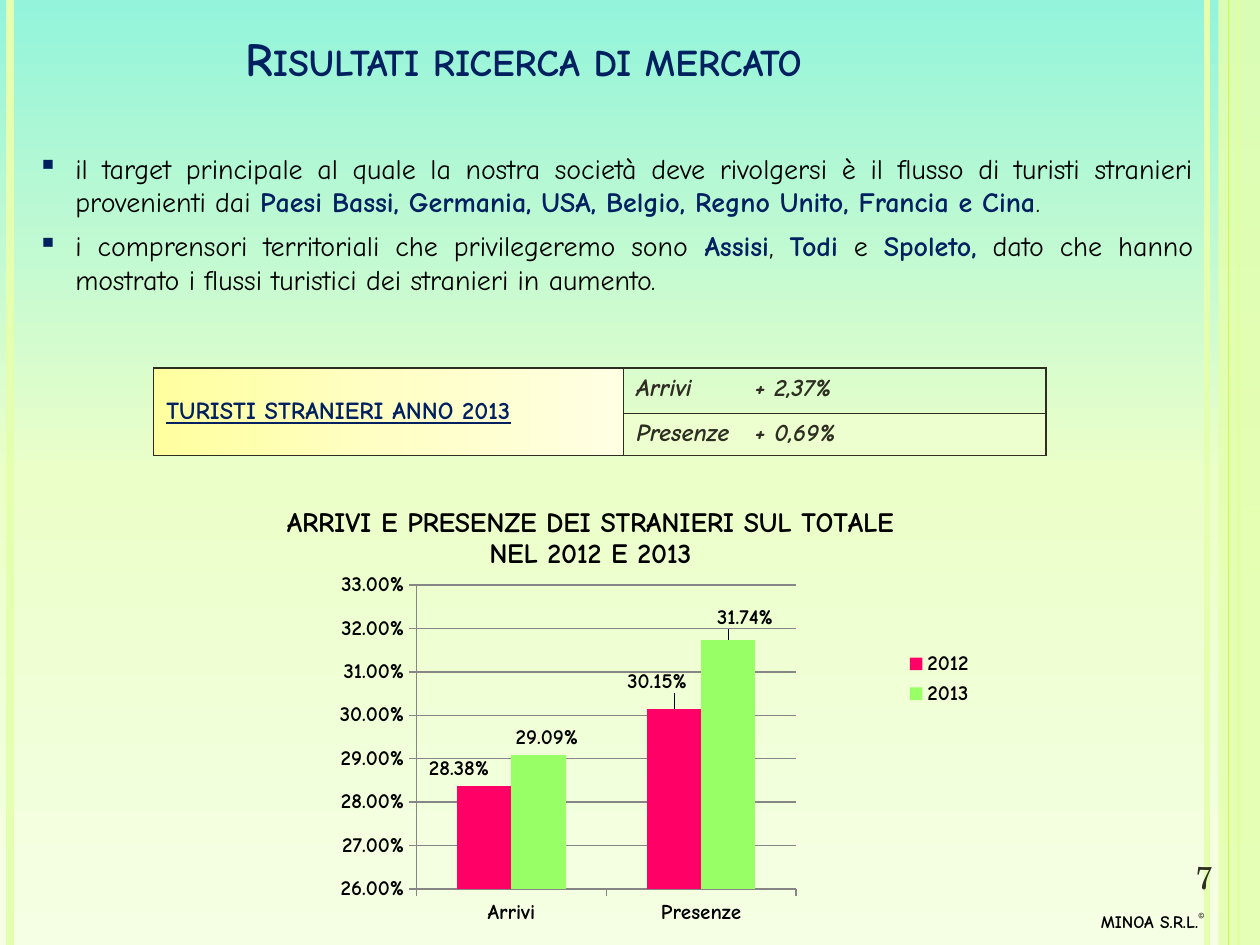
from dataclasses import dataclass

from lxml import etree
from pptx import Presentation
from pptx.chart.data import CategoryChartData
from pptx.dml.color import RGBColor
from pptx.enum.chart import (XL_CHART_TYPE, XL_LABEL_POSITION,
                             XL_LEGEND_POSITION, XL_TICK_MARK)
from pptx.enum.shapes import MSO_CONNECTOR, MSO_SHAPE
from pptx.enum.text import MSO_ANCHOR, PP_ALIGN
from pptx.oxml.ns import qn
from pptx.util import Inches, Pt

COLUMN = XL_CHART_TYPE.COLUMN_CLUSTERED
OUT_END = XL_LABEL_POSITION.OUTSIDE_END
RIGHT_SIDE = XL_LEGEND_POSITION.RIGHT
TICK_OUT = XL_TICK_MARK.OUTSIDE
STRAIGHT = MSO_CONNECTOR.STRAIGHT
RECT = MSO_SHAPE.RECTANGLE
MIDDLE, TOP = MSO_ANCHOR.MIDDLE, MSO_ANCHOR.TOP
LEFT, RIGHT, JUST = PP_ALIGN.LEFT, PP_ALIGN.RIGHT, PP_ALIGN.JUSTIFY

BLACK = RGBColor(0x00, 0x00, 0x00)
NAVY = RGBColor(0x00, 0x20, 0x60)
OLIVE = RGBColor(0x2E, 0x2D, 0x21)
PALE = RGBColor(0xE4, 0xFF, 0xB0)
LIME = RGBColor(0xCF, 0xFF, 0x43)
MINT = RGBColor(0xED, 0xFF, 0xCF)
GREY = RGBColor(0x86, 0x86, 0x86)
PINK = RGBColor(0xFF, 0x00, 0x66)
GREEN = RGBColor(0x99, 0xFF, 0x66)
SKY = ("93F4DB", "EBFFC9", "F5FFE4")
CREAM = ("FFFFA0", "FFFFC5", "FFFFE3")

# The slide is a grid of 100 columns by 75 rows
COLS, ROWS = 100, 75
CELL = Inches(0.1)
PERCENT = "0.00%"
COMIC = {"name": "Comic Neue", "size": Pt(12), "bold": True, "color": BLACK}
PLAIN = COMIC | {"size": Pt(16), "bold": False}
STRONG = PLAIN | {"bold": True, "color": NAVY}
HEAD = STRONG | {"size": Pt(27)}
LABEL = STRONG | {"size": Pt(14), "underline": True}
VALUE = LABEL | {"underline": False, "italic": True, "color": OLIVE}


@dataclass
class Stripe:
    col: float
    width: float
    color: RGBColor


@dataclass
class Box:
    col: float
    row: float
    wide: float
    high: float

    def emu(self) -> list[int]:
        return [grid(n) for n in (self.col, self.row, self.wide, self.high)]


@dataclass
class Bars:
    name: str
    values: tuple
    color: RGBColor
    shifts: tuple


STRIPES = [Stripe(95.8, 3, PALE), Stripe(0.8, 4.5, PALE), Stripe(98.3, 1.5, LIME)]
EDGE = Stripe(97.5, 0.75, LIME)
POINTS = [
    [("il target principale al quale la nostra società deve rivolgersi è il "
      "flusso di turisti stranieri provenienti dai ", PLAIN),
     ("Paesi Bassi, Germania, USA, Belgio, Regno Unito, Francia e Cina", STRONG),
     (".", PLAIN)],
    [("i comprensori territoriali che privilegeremo sono ", PLAIN),
     ("Assisi", STRONG), (", ", PLAIN), ("Todi", STRONG), (" e ", PLAIN),
     ("Spoleto,", STRONG),
     (" dato che hanno mostrato i flussi turistici dei stranieri in aumento.", PLAIN)],
]
SERIES = [
    Bars("2012", (0.2838, 0.3015), PINK, ((-0.03, 0), (-0.02, -0.02))),
    Bars("2013", (0.2909, 0.3174), GREEN, ((0.01, 0), (0.02, -0.01))),
]


def grid(units: float) -> int:
    return round(units * CELL)


def node(parent, tag: str, **attrs):
    return etree.SubElement(parent, qn(tag), attrs)


def style(font, form: dict) -> None:
    for key, val in form.items():
        if key == "color":
            font.color.rgb = val
        else:
            setattr(font, key, val)


def write(para, runs: list, align=LEFT) -> None:
    para.alignment = align
    for text, form in runs:
        run = para.add_run()
        run.text = text
        style(run.font, form)


def add_text(slide, box: Box, anchor=TOP):
    frame = slide.shapes.add_textbox(*box.emu()).text_frame
    frame.word_wrap = True
    frame.vertical_anchor = anchor
    return frame


def shade(fill, root, stops: tuple, angle: float) -> None:
    fill.gradient()
    fill.gradient_angle = angle
    list_ = root.find(".//" + qn("a:gsLst"))
    list_.clear()
    for i, tone in enumerate(stops):
        stop = node(list_, "a:gs", pos=str(i * 50000))
        node(stop, "a:srgbClr", val=tone)


def add_stripe(slide, stripe: Stripe) -> None:
    x = grid(stripe.col)
    line = slide.shapes.add_connector(STRAIGHT, x, 0, x, grid(ROWS))
    line.line.color.rgb = stripe.color
    line.line.width = Pt(stripe.width)
    node(line.element.spPr, "a:effectLst")


def add_frame(slide) -> None:
    shade(slide.background.fill, slide.element, SKY, 270)
    for stripe in STRIPES:
        add_stripe(slide, stripe)
    band = slide.shapes.add_shape(RECT, *Box(96.7, 0, 3.3, ROWS).emu())
    band.shadow.inherit = False
    band.fill.solid()
    band.fill.fore_color.rgb = PALE
    band.line.fill.background()
    node(band.element.spPr.find(".//" + qn("a:srgbClr")), "a:alpha", val="87000")
    add_stripe(slide, EDGE)


def add_words(slide) -> None:
    # Footer and page number
    foot = add_text(slide, Box(77.4, 71.5, 19.2, 3)).paragraphs[0]
    mark = {"name": "Comic Neue", "size": Pt(12), "color": OLIVE}
    write(foot, [("MINOA S.R.L.", COMIC | {"size": Pt(10)}), ("©", mark)], RIGHT)
    foot.runs[1].font._element.set("baseline", "30000")
    page = {"name": "TeX Gyre Schola", "size": Pt(18), "color": OLIVE}
    write(add_text(slide, Box(93.9, 67.6, 6.8, 4)).paragraphs[0], [("7", page)])
    # Title
    head = add_text(slide, Box(18.5, 0, 60.6, 9.2), MIDDLE).paragraphs[0]
    write(head, [("Risultati ricerca di mercato", HEAD)], JUST)
    head.runs[0].font._element.set("cap", "small")
    # Bullets
    body = add_text(slide, Box(2, 11.5, 93.7, 20))
    for i, runs in enumerate(POINTS):
        para = body.add_paragraph() if i else body.paragraphs[0]
        para.space_after = Pt(6)
        props = para._p.get_or_add_pPr()
        props.set("marL", str(grid(3)))
        props.set("indent", str(grid(-3)))
        node(node(props, "a:buClr"), "a:srgbClr", val=str(NAVY))
        node(props, "a:buChar", char="▪")
        write(para, runs, JUST)


def add_rates(slide) -> None:
    table = slide.shapes.add_table(2, 2, *Box(12.2, 29.2, 70.8, 6.7).emu()).table
    table.first_row = table.horz_banding = False
    for part, size in zip([*table.columns, *table.rows], (37.3, 33.5, 3.6, 3.1)):
        setattr(part, "width" if size > 10 else "height", grid(size))
    table.cell(0, 0).merge(table.cell(1, 0))
    for cell in table.iter_cells():
        cell.fill.background()
        props = cell._tc.get_or_add_tcPr()
        for i, side in enumerate("LRTB"):
            edge = node(props, "a:ln" + side, w=str(Pt(1)))
            node(node(edge, "a:solidFill"), "a:srgbClr", val=str(OLIVE))
            props.insert(i, edge)
    main = table.cell(0, 0)
    main.vertical_anchor = MIDDLE
    shade(main.fill, main._tc, CREAM, 0)
    write(main.text_frame.paragraphs[0], [("TURISTI STRANIERI ANNO 2013", LABEL)])
    for row, text in enumerate(("Arrivi\t+ 2,37%", "Presenze\t+ 0,69%")):
        para = table.cell(row, 1).text_frame.paragraphs[0]
        tabs = node(para._p.get_or_add_pPr(), "a:tabLst")
        node(tabs, "a:tab", pos=str(grid(9.4)), algn="l")
        write(para, [(text, VALUE)])
    last = table.cell(1, 1).fill
    last.solid()
    last.fore_color.rgb = MINT


def place(parent, index: int, inner=False, edge=True, **shares) -> None:
    """Give a chart part a manual layout in shares of the chart."""
    for old in parent.findall(qn("c:layout")):
        parent.remove(old)
    layout = node(parent, "c:layout")
    parent.insert(index, layout)
    manual = node(layout, "c:manualLayout")
    if inner:
        node(manual, "c:layoutTarget", val="inner")
    for key in "xy" if edge else "":
        node(manual, f"c:{key}Mode", val="edge")
    for key, share in shares.items():
        node(manual, "c:" + key, val=str(share))


def add_bars(slide) -> None:
    data = CategoryChartData(number_format=PERCENT)
    data.categories = ["Arrivi", "Presenze"]
    for bars in SERIES:
        data.add_series(bars.name, bars.values)
    chart = slide.shapes.add_chart(COLUMN, *Box(13, 37.2, 66.9, 40.2).emu(), data).chart
    style(chart.font, COMIC)
    # Title, legend and plot area
    write(chart.chart_title.text_frame.paragraphs[0],
          [("ARRIVI E PRESENZE DEI STRANIERI SUL TOTALE NEL 2012 E 2013",
            COMIC | {"size": Pt(16)})], None)
    title = chart.chart_title._element
    place(title, 1, x=0.14, y=0.06)
    title.find(qn("c:overlay")).set("val", "1")
    chart.has_legend = True
    chart.legend.position = RIGHT_SIDE
    chart.legend.include_in_layout = False
    style(chart.legend.font, COMIC)
    place(chart.legend._element, 1, x=0.87, y=0.35, w=0.1, h=0.13)
    place(chart._chartSpace.chart.plotArea, 0, True, x=0.3, y=0.23, w=0.45, h=0.6)
    # Axes
    scale = chart.value_axis
    for key, val in {"minimum_scale": 0.26, "maximum_scale": 0.33,
                     "major_unit": 0.01, "has_major_gridlines": True}.items():
        setattr(scale, key, val)
    scale.tick_labels.number_format = PERCENT
    scale.tick_labels.number_format_is_linked = False
    for axis in (scale, chart.category_axis):
        axis.major_tick_mark = TICK_OUT
        style(axis.tick_labels.font, COMIC)
    for part in (scale, chart.category_axis, scale.major_gridlines):
        part.format.line.color.rgb = GREY
        part.format.line.width = Pt(0.75)
    # Bars and their values
    plot = chart.plots[0]
    plot.gap_width, plot.overlap, plot.vary_by_categories = 150, 0, False
    for series, bars in zip(plot.series, SERIES):
        series.format.fill.solid()
        series.format.fill.fore_color.rgb = bars.color
        labels = series.data_labels
        labels.show_value = True
        labels.number_format = PERCENT
        labels.number_format_is_linked = False
        style(labels.font, COMIC)
        for i, (x, y) in enumerate(bars.shifts):
            label = series.points[i].data_label
            label.position = OUT_END
            style(label.font, COMIC)
            place(labels._element.findall(qn("c:dLbl"))[i], 1, edge=False, x=x, y=y)


def main() -> None:
    deck = Presentation()
    deck.slide_width, deck.slide_height = grid(COLS), grid(ROWS)
    slide = deck.slides.add_slide(deck.slide_layouts[6])
    for draw in (add_frame, add_words, add_bars, add_rates):
        draw(slide)
    deck.save("out.pptx")


if __name__ == "__main__":
    main()
